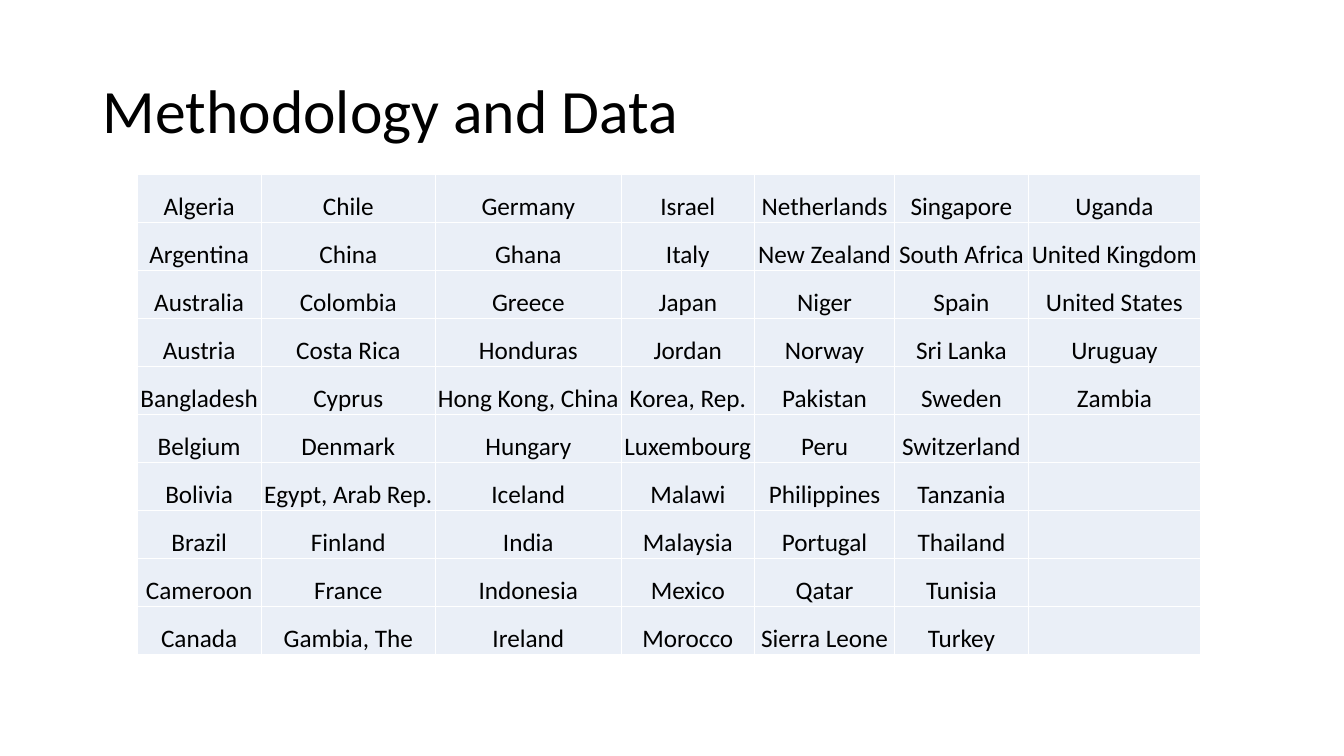
from dataclasses import dataclass

from lxml.etree import SubElement
from pptx import Presentation
from pptx.dml.color import RGBColor
from pptx.enum.text import MSO_ANCHOR, PP_ALIGN
from pptx.oxml.ns import qn
from pptx.slide import Slide
from pptx.table import _Cell
from pptx.text.text import _Paragraph
from pptx.util import Inches, Pt

SLIDE_W, SLIDE_H = Inches(13.33), Inches(7.5)
FONT, BLACK, WHITE, PALE_BLUE = "Calibri", "000000", "FFFFFF", "EAEFF7"
TABLE_LEFT, TABLE_TOP, ROW_SHARE = 10.2, 23.1, 6.35


@dataclass(frozen=True)
class CountryColumn:
    """A table column: its share of the slide width and its countries."""

    share: float
    countries: tuple[str, ...]


COLUMNS = (
    CountryColumn(9.23, ("Algeria", "Argentina", "Australia", "Austria", "Bangladesh",
                         "Belgium", "Bolivia", "Brazil", "Cameroon", "Canada")),
    CountryColumn(12.97, ("Chile", "China", "Colombia", "Costa Rica", "Cyprus",
                          "Denmark", "Egypt, Arab Rep.", "Finland", "France", "Gambia, The")),
    CountryColumn(13.82, ("Germany", "Ghana", "Greece", "Honduras", "Hong Kong, China",
                          "Hungary", "Iceland", "India", "Indonesia", "Ireland")),
    CountryColumn(9.92, ("Israel", "Italy", "Japan", "Jordan", "Korea, Rep.",
                         "Luxembourg", "Malawi", "Malaysia", "Mexico", "Morocco")),
    CountryColumn(10.43, ("Netherlands", "New Zealand", "Niger", "Norway", "Pakistan",
                          "Peru", "Philippines", "Portugal", "Qatar", "Sierra Leone")),
    CountryColumn(9.94, ("Singapore", "South Africa", "Spain", "Sri Lanka", "Sweden",
                         "Switzerland", "Tanzania", "Thailand", "Tunisia", "Turkey")),
    CountryColumn(12.83, ("Uganda", "United Kingdom", "United States", "Uruguay", "Zambia")),
)


def across(share: float) -> int:
    """Turn a percentage of the slide width into a length."""
    return round(SLIDE_W * share / 100)


def down(share: float) -> int:
    """Turn a percentage of the slide height into a length."""
    return round(SLIDE_H * share / 100)


def color(value: str) -> RGBColor:
    """Turn a hex string into a colour."""
    return RGBColor.from_string(value)


def add_run(p: _Paragraph, text: str, size: int) -> None:
    """Add one run of black text to a paragraph."""
    r = p.add_run()
    r.text = text
    r.font.name = FONT
    r.font.size = Pt(size)
    r.font.color.rgb = color(BLACK)


def add_title(slide: Slide, text: str) -> None:
    """Add the slide's heading."""
    sp = slide.shapes.add_textbox(across(6.9), down(5.33), across(86.27), down(19.33))
    tf = sp.text_frame
    tf.word_wrap = True
    tf.vertical_anchor = MSO_ANCHOR.MIDDLE
    p = tf.paragraphs[0]
    p.line_spacing = 0.9
    add_run(p, text, 44)


def style_cell(cell: _Cell) -> None:
    """Give a cell its borders, fill, margins and alignment."""
    tc_pr = cell._tc.get_or_add_tcPr()
    for side in ("a:lnL", "a:lnR", "a:lnT", "a:lnB"):
        ln = SubElement(tc_pr, qn(side), w=str(Pt(1)))
        fill = SubElement(ln, qn("a:solidFill"))
        SubElement(fill, qn("a:srgbClr"), val=WHITE)
    cell.fill.solid()
    cell.fill.fore_color.rgb = color(PALE_BLUE)
    cell.margin_left = cell.margin_right = cell.margin_top = Inches(0.01)
    cell.margin_bottom = 0
    cell.vertical_anchor = MSO_ANCHOR.BOTTOM
    cell.text_frame.paragraphs[0].alignment = PP_ALIGN.CENTER


def add_country_table(slide: Slide, columns: tuple[CountryColumn, ...]) -> None:
    """Add the table of countries, filled column by column."""
    row_count = max(len(column.countries) for column in columns)
    width = across(sum(column.share for column in columns))
    table = slide.shapes.add_table(row_count, len(columns), across(TABLE_LEFT), down(TABLE_TOP),
                                   width, down(ROW_SHARE * row_count)).table
    table.first_row = table.horz_banding = False
    for row in table.rows:
        row.height = down(ROW_SHARE)
    for cell in table.iter_cells():
        style_cell(cell)
    for i, column in enumerate(columns):
        table.columns[i].width = across(column.share)
        for j, country in enumerate(column.countries):
            add_run(table.cell(j, i).text_frame.paragraphs[0], country, 18)


def main() -> None:
    """Build the slide and save it."""
    prs = Presentation()
    prs.slide_width, prs.slide_height = SLIDE_W, SLIDE_H
    slide = prs.slides.add_slide(prs.slide_layouts[6])
    add_title(slide, "Methodology and Data")
    add_country_table(slide, COLUMNS)
    prs.save("out.pptx")


if __name__ == "__main__":
    main()
